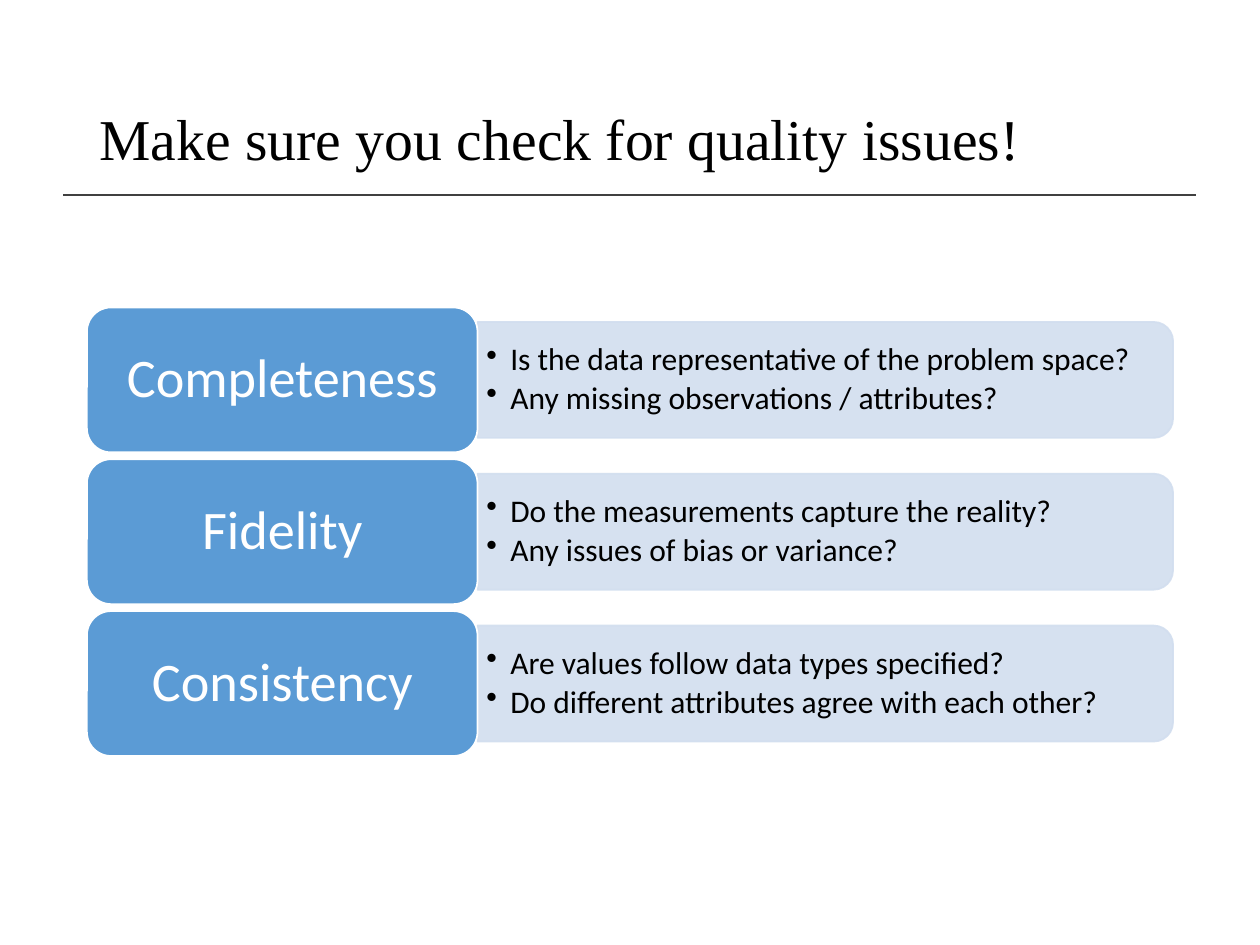
from lxml.etree import SubElement
from pptx import Presentation
from pptx.dml.color import RGBColor
from pptx.enum.shapes import MSO_CONNECTOR, MSO_SHAPE
from pptx.enum.text import MSO_ANCHOR, PP_ALIGN
from pptx.oxml.ns import qn
from pptx.util import Inches, Pt

# Content
TITLE = "Make sure you check for quality issues!"
ISSUES = [
    ("Completeness", ["Is the data representative of the problem space?",
                      "Any missing observations / attributes?"]),
    ("Fidelity", ["Do the measurements capture the reality?",
                  "Any issues of bias or variance?"]),
    ("Consistency", ["Are values follow data types specified?",
                     "Do different attributes agree with each other?"]),
]

THEME = {
    "title": {"name": "Times New Roman", "size": Pt(33), "color": "000000"},
    "label": {"name": "Calibri", "size": Pt(31), "color": "FFFFFF"},
    "point": {"name": "Calibri", "size": Pt(18), "color": "000000"},
    "rule": "404040", "label_fill": "5B9BD5", "label_line": "FFFFFF",
    "panel": "D2DEEF", "panel_alpha": 90,
}

# Layout in inches
LEFT, TOP, PITCH = 0.69, 2.44, 1.205
LABEL_WIDTH, LABEL_HEIGHT = 3.1, 1.15
PANEL_WIDTH, PANEL_HEIGHT = 5.52, 0.92
POINTS_WIDTH, POINTS_HEIGHT = 5.48, 0.83
PANEL_LEFT = LEFT + LABEL_WIDTH


def set_frame(frame, across, down):
    values = {"word_wrap": True, "vertical_anchor": MSO_ANCHOR.MIDDLE,
              "margin_left": Inches(across), "margin_right": Inches(across),
              "margin_top": Inches(down), "margin_bottom": Inches(down)}
    for name, value in values.items():
        setattr(frame, name, value)


def write(para, text, style, **layout):
    span = para.add_run()
    span.text = text
    for name, value in THEME[style].items():
        if name == "color":
            span.font.color.rgb = RGBColor.from_string(value)
        else:
            setattr(span.font, name, value)
    for name, value in {"line_spacing": 0.9, **layout}.items():
        setattr(para, name, value)


def add_bullet(para):
    properties = para._p.get_or_add_pPr()
    properties.set("marL", str(Inches(0.19)))
    properties.set("indent", str(-Inches(0.19)))
    SubElement(properties, qn("a:buChar"), char="•")


def add_block(page, kind, bounds, fill, line, alpha=100):
    block = page.shapes.add_shape(kind, *map(Inches, bounds))
    block.shadow.inherit = False
    block.fill.solid()
    block.fill.fore_color.rgb = RGBColor.from_string(fill)
    block.line.color.rgb = RGBColor.from_string(line)
    block.line.width = Pt(1)
    if alpha < 100:
        for color in block._element.spPr.iter(qn("a:srgbClr")):
            SubElement(color, qn("a:alpha"), val=str(alpha * 1000))
    return block


def add_issue(page, middle, label, points):
    # Panel: a shape with two round corners, turned so they face right
    panel = add_block(
        page, MSO_SHAPE.ROUND_2_SAME_RECTANGLE,
        (PANEL_LEFT + (PANEL_WIDTH - PANEL_HEIGHT) / 2, middle - PANEL_WIDTH / 2,
         PANEL_HEIGHT, PANEL_WIDTH),
        THEME["panel"], THEME["panel"], THEME["panel_alpha"])
    panel.rotation = 90

    # Bullet points
    box = page.shapes.add_textbox(*map(Inches, (
        PANEL_LEFT, middle - POINTS_HEIGHT / 2, POINTS_WIDTH, POINTS_HEIGHT)))
    frame = box.text_frame
    set_frame(frame, 0.07, 0.04)
    for index, point in enumerate(points):
        para = frame.add_paragraph() if index else frame.paragraphs[0]
        write(para, point, "point", space_after=Pt(2.7))
        add_bullet(para)

    # Label
    block = add_block(page, MSO_SHAPE.ROUNDED_RECTANGLE,
                      (LEFT, middle - LABEL_HEIGHT / 2, LABEL_WIDTH, LABEL_HEIGHT),
                      THEME["label_fill"], THEME["label_line"])
    set_frame(block.text_frame, 0.18, 0.11)
    write(block.text_frame.paragraphs[0], label, "label", alignment=PP_ALIGN.CENTER)


def main():
    deck = Presentation()
    deck.slide_width, deck.slide_height = Inches(10), Inches(7.5)
    page = deck.slides.add_slide(deck.slide_layouts[5])

    # Rule under the title
    rule = page.shapes.add_connector(
        MSO_CONNECTOR.STRAIGHT, *map(Inches, (0.5, 1.55, 9.49, 1.55)))
    rule.line.color.rgb = RGBColor.from_string(THEME["rule"])
    rule.line.width = Pt(1)
    SubElement(rule._element.spPr, qn("a:effectLst"))

    # Title
    title = page.shapes.title
    bounds = {"left": LEFT, "top": 0.4, "width": 8.62, "height": 1.45}
    for name, value in bounds.items():
        setattr(title, name, Inches(value))
    set_frame(title.text_frame, 0.1, 0.05)
    write(title.text_frame.paragraphs[0], TITLE, "title", alignment=PP_ALIGN.LEFT)

    # One row for each issue
    for row, (label, points) in enumerate(ISSUES):
        add_issue(page, TOP + LABEL_HEIGHT / 2 + row * PITCH, label, points)

    deck.save("out.pptx")


if __name__ == "__main__":
    main()
